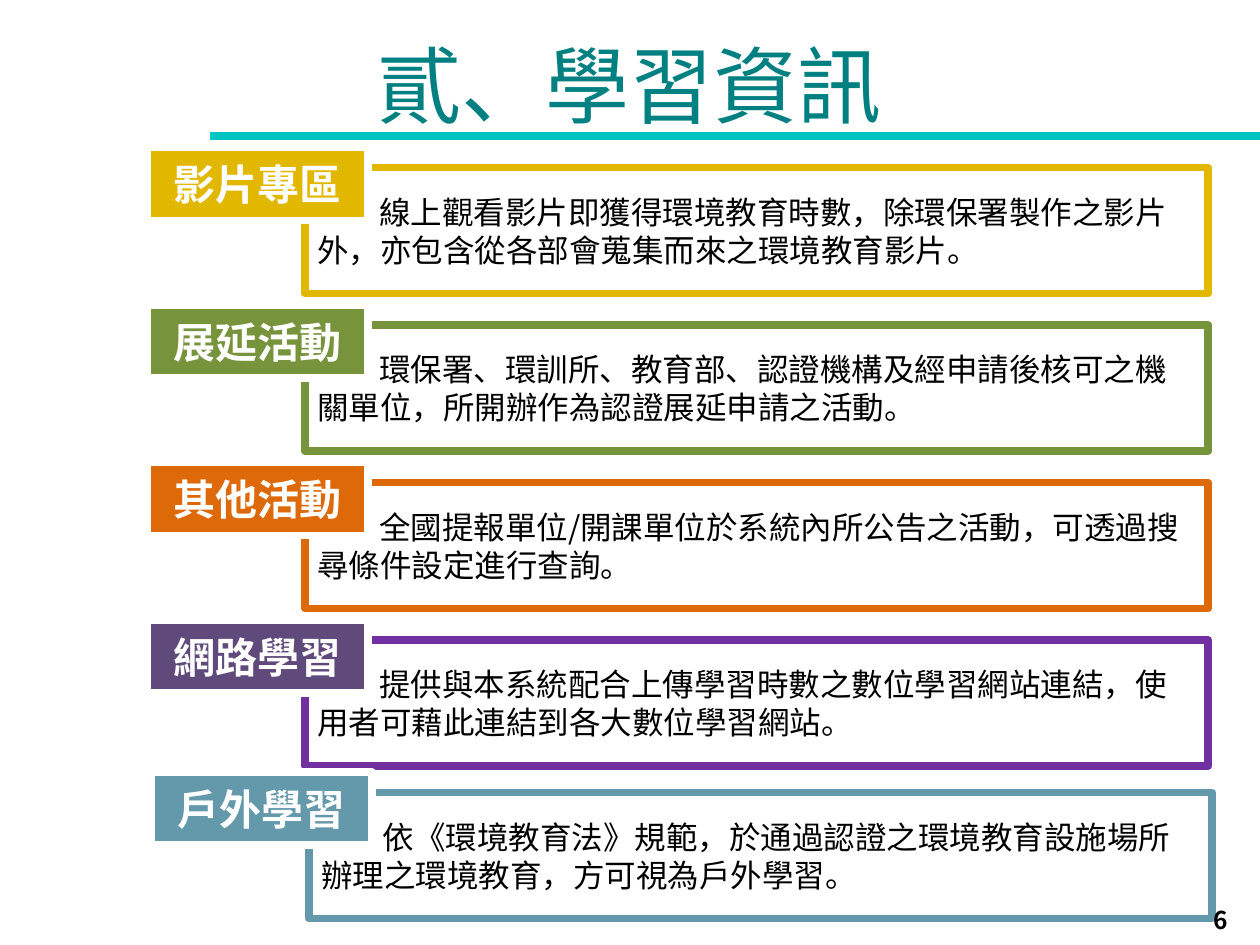
from lxml import etree
from pptx import Presentation
from pptx.dml.color import RGBColor
from pptx.enum import shapes, text
from pptx.oxml.ns import qn
from pptx.util import Inches, Pt

FONT = "Noto Sans CJK SC"


def rgb(value):
    return RGBColor.from_string(value)


def write(sp, content, size, color, align, bold=False, inset=None):
    tf = sp.text_frame
    tf.word_wrap = True
    tf.vertical_anchor = text.MSO_ANCHOR.MIDDLE
    if inset is not None:
        tf.margin_left = tf.margin_right = Inches(inset)
        tf.margin_top = tf.margin_bottom = Inches(inset)
    tf.text = content
    p = tf.paragraphs[0]
    p.alignment = align
    r = p.runs[0]
    r.font.size = Pt(size)
    r.font.bold = bold
    r.font.name = FONT
    r.font.color.rgb = rgb(color)
    etree.SubElement(r.font._element, qn("a:ea"), typeface=FONT)
    return p


prs = Presentation()
prs.slide_width = Inches(10)
prs.slide_height = Inches(7.5)
slide = prs.slides.add_slide(prs.slide_layouts[6])

title = slide.shapes.add_textbox(Inches(0.5), Inches(0.25), Inches(9), Inches(0.83))
write(title, "貳、學習資訊", 48, "008080", text.PP_ALIGN.CENTER)

rule = slide.shapes.add_connector(
    shapes.MSO_CONNECTOR.STRAIGHT, Inches(1.67), Inches(1.08), Inches(10), Inches(1.08))
rule.line.color.rgb = rgb("00C4BF")
rule.line.width = Pt(4.5)
etree.SubElement(rule._element.spPr, qn("a:effectLst"))

sections = [
    (1.17, 1.17, "影片專區", "E2B700", "E2B700",
     "線上觀看影片即獲得環境教育時數，除環保署製作之影片外，亦包含從各部會蒐集而來之環境教育影片。"),
    (1.17, 2.42, "展延活動", "77933C", "77933C",
     "環保署、環訓所、教育部、認證機構及經申請後核可之機關單位，所開辦作為認證展延申請之活動。"),
    (1.17, 3.67, "其他活動", "DD6909", "DD6909",
     "全國提報單位/開課單位於系統內所公告之活動，可透過搜尋條件設定進行查詢。"),
    (1.17, 4.92, "網路學習", "604A7B", "7030A0",
     "提供與本系統配合上傳學習時數之數位學習網站連結，使用者可藉此連結到各大數位學習網站。"),
    (1.2, 6.13, "戶外學習", "6399AB", "6399AB",
     "依《環境教育法》規範，於通過認證之環境教育設施場所辦理之環境教育，方可視為戶外學習。"),
]

for left, top, label, label_color, frame_color, description in sections:
    frame = slide.shapes.add_shape(
        shapes.MSO_SHAPE.RECTANGLE,
        Inches(left + 1.25), Inches(top + 0.16), Inches(7.17), Inches(1))
    frame.fill.background()
    frame.line.color.rgb = rgb(frame_color)
    p = write(frame, description, 18, "000000", text.PP_ALIGN.LEFT)
    p._p.get_or_add_pPr().set("indent", str(Inches(0.49)))

    tab = slide.shapes.add_shape(
        shapes.MSO_SHAPE.RECTANGLE, Inches(left), Inches(top), Inches(1.75), Inches(0.58))
    tab.fill.solid()
    tab.fill.fore_color.rgb = rgb(label_color)
    tab.line.color.rgb = rgb("FFFFFF")
    write(tab, label, 24, "FFFFFF", text.PP_ALIGN.CENTER, bold=True, inset=0.05)

    for sp in (frame, tab):
        sp.line.width = Pt(4.5)
        sp.shadow.inherit = False

number = slide.shapes.add_textbox(Inches(9.42), Inches(7.1), Inches(0.42), Inches(0.4))
write(number, "6", 14, "000000", text.PP_ALIGN.RIGHT, bold=True)

prs.save("out.pptx")
